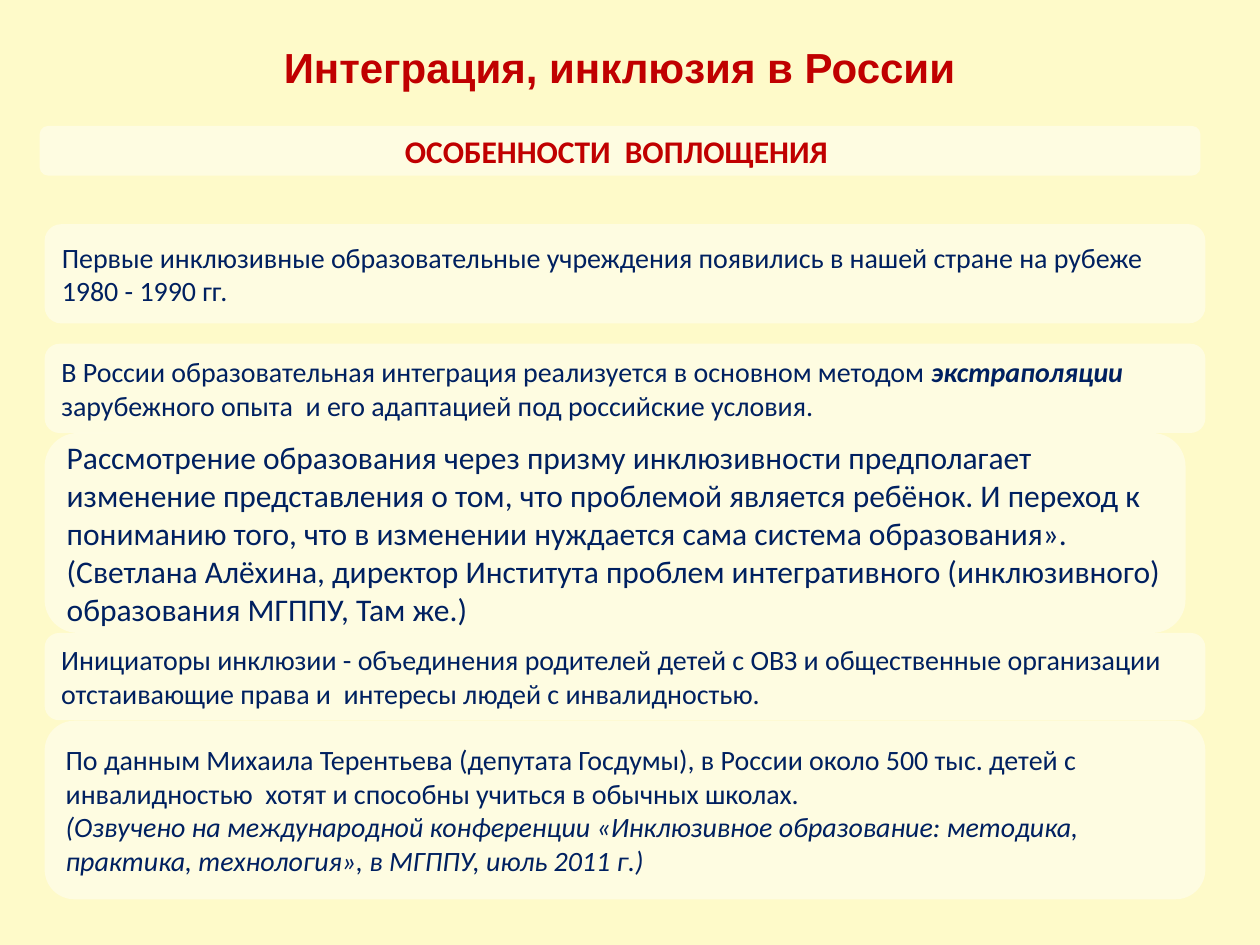
from dataclasses import dataclass

from lxml import etree
from pptx import Presentation
from pptx.dml.color import RGBColor
from pptx.enum.shapes import MSO_SHAPE
from pptx.enum.text import MSO_ANCHOR, PP_ALIGN
from pptx.oxml.ns import qn
from pptx.util import Cm, Pt

ROUNDED = MSO_SHAPE.ROUNDED_RECTANGLE
MIDDLE = MSO_ANCHOR.MIDDLE
LEFT, CENTER = PP_ALIGN.LEFT, PP_ALIGN.CENTER


@dataclass(frozen=True)
class Theme:
    background: RGBColor = RGBColor(0xFE, 0xFA, 0xC9)
    panel: RGBColor = RGBColor(0xFF, 0xFF, 0xFF)
    panel_opacity: int = 45
    heading: RGBColor = RGBColor(0xC0, 0x00, 0x00)
    body: RGBColor = RGBColor(0x00, 0x20, 0x60)
    heading_font: str = "Arial"
    body_font: str = "Calibri"
    title_size: int = 24
    large_size: int = 18
    body_size: int = 16


class SlideBuilder:
    def __init__(self, slide, theme):
        self.slide = slide
        self.theme = theme
        fill = slide.background.fill
        fill.solid()
        fill.fore_color.rgb = theme.background

    def set_text(self, tf, paragraphs, font, size, color, align=LEFT):
        """Fill a frame; a paragraph is a list of (text, style letters) pairs."""
        tf.word_wrap = True
        for i, parts in enumerate(paragraphs):
            p = tf.paragraphs[0] if i == 0 else tf.add_paragraph()
            p.alignment = align
            for text, style in parts:
                for n, line in enumerate(text.split("\n")):
                    if n:
                        p.add_line_break()
                    r = p.add_run()
                    r.text = line
                    r.font.name = font
                    r.font.size = Pt(size)
                    r.font.color.rgb = color
                    r.font.bold = "b" in style
                    r.font.italic = "i" in style

    def title(self, box, text):
        sp = self.slide.shapes.add_textbox(*map(Cm, box))
        t = self.theme
        self.set_text(sp.text_frame, [[(text, "b")]], t.heading_font,
                      t.title_size, t.heading, CENTER)

    def panel(self, box, paragraphs, size=None, color=None, align=LEFT):
        t = self.theme
        sp = self.slide.shapes.add_shape(ROUNDED, *map(Cm, box))
        sp.shadow.inherit = False
        sp.line.fill.background()
        sp.fill.solid()
        sp.fill.fore_color.rgb = t.panel
        rgb = sp.element.spPr.find(qn("a:solidFill")).find(qn("a:srgbClr"))
        etree.SubElement(rgb, qn("a:alpha"), val=str(t.panel_opacity * 1000))
        sp.text_frame.vertical_anchor = MIDDLE
        self.set_text(sp.text_frame, paragraphs, t.body_font,
                      size or t.body_size, color or t.body, align)


def main():
    prs = Presentation()
    prs.slide_width, prs.slide_height = Cm(25.4), Cm(19.05)
    theme = Theme()
    s = SlideBuilder(prs.slides.add_slide(prs.slide_layouts[6]), theme)
    left, width = 0.9, 23.4

    s.title((4.1, 0.72, 16.78, 1.28), "Интеграция, инклюзия в России")
    s.panel((0.8, 2.54, width, 1), [[("ОСОБЕННОСТИ  ВОПЛОЩЕНИЯ ", "b")]],
            theme.large_size, theme.heading, CENTER)
    s.panel((left, 4.52, width, 2), [[
        ("Первые инклюзивные образовательные учреждения появились в нашей "
         "стране на рубеже 1980 - 1990 гг.", "")]])
    s.panel((left, 6.93, width, 1.8), [[
        ("В России образовательная интеграция реализуется в основном методом ", ""),
        ("экстраполяции ", "bi"),
        ("зарубежного опыта  и его адаптацией под российские условия.", "")]])
    s.panel((left, 8.73, 23, 4.03), [[
        ("Рассмотрение образования через призму инклюзивности предполагает "
         "изменение представления о том, что проблемой является ребёнок. "
         "И переход к пониманию того, что в изменении нуждается сама система "
         "образования». \n(Светлана Алёхина, директор Института проблем "
         "интегративного (инклюзивного) образования МГППУ, Там же.)", "")]],
        theme.large_size)
    s.panel((left, 12.76, width, 1.76), [[
        ("Инициаторы инклюзии - объединения родителей детей с ОВЗ и "
         "общественные организации отстаивающие права и  интересы людей "
         "с инвалидностью.", "")]])
    s.panel((left, 14.53, width, 3.6), [
        [("По данным Михаила Терентьева (депутата Госдумы), в России около "
          "500 тыс. детей с инвалидностью  хотят и способны учиться в обычных "
          "школах.", "")],
        [("(Озвучено на международной конференции «Инклюзивное образование: "
          "методика, практика, технология», в МГППУ, июль 2011 г.)", "i")]])

    prs.save("out.pptx")


if __name__ == "__main__":
    main()
